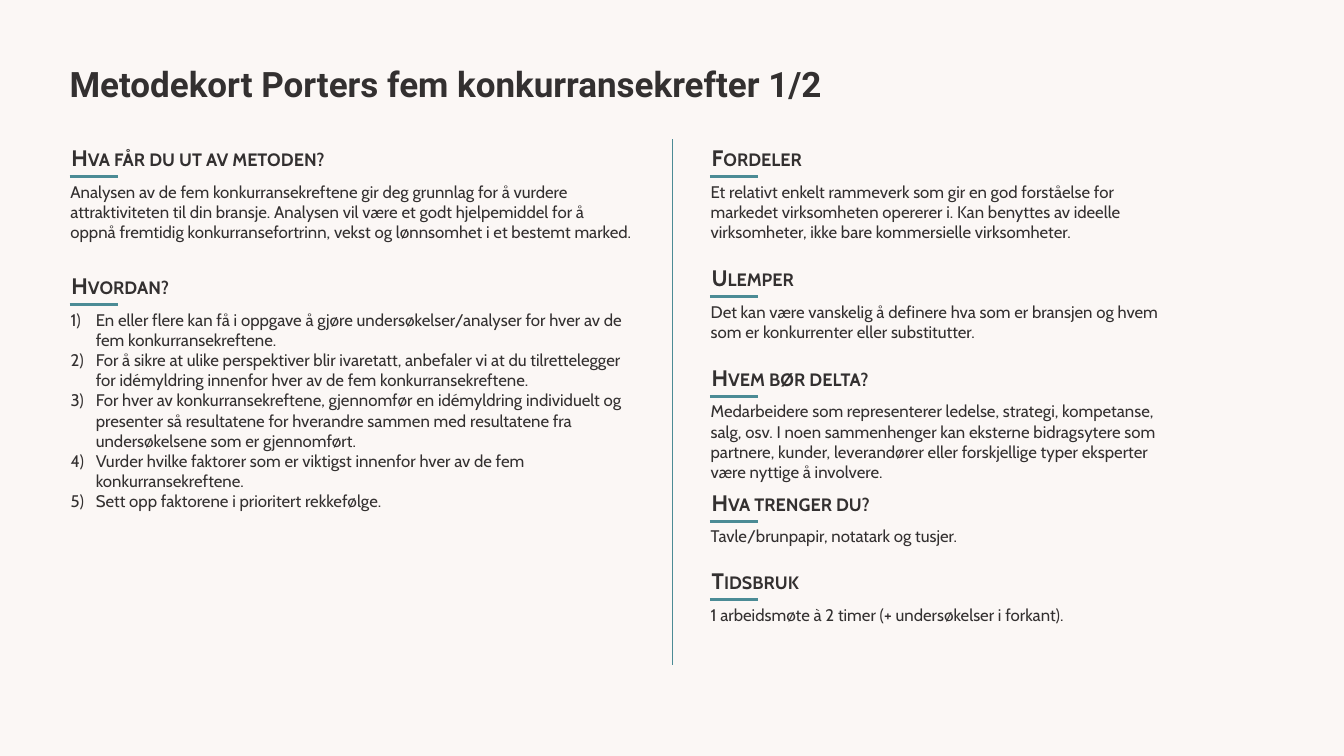
from lxml.etree import SubElement
from pptx import Presentation
from pptx.dml.color import RGBColor
from pptx.enum.shapes import MSO_CONNECTOR
from pptx.enum.text import MSO_ANCHOR, MSO_AUTO_SIZE, PP_ALIGN
from pptx.oxml.ns import qn
from pptx.util import Inches, Pt

INK, TEAL, PAPER = "333030", "4B8B95", "FBF7F5"
TITLE_FONT = {"name": "Roboto", "size": Pt(25), "bold": True}
HEADING_FONT = {"name": "Cabin", "size": Pt(16), "bold": True}
BODY_FONT = {"name": "Cabin", "size": Pt(12), "bold": False}
HEADING_HEIGHT = 0.37

STEPS = [
    "En eller flere kan få i oppgave å gjøre undersøkelser/analyser for hver av de fem konkurransekreftene.",
    "For å sikre at ulike perspektiver blir ivaretatt, anbefaler vi at du tilrettelegger for idémyldring "
    "innenfor hver av de fem konkurransekreftene.",
    "For hver av konkurransekreftene, gjennomfør en idémyldring individuelt og presenter så resultatene for "
    "hverandre sammen med resultatene fra undersøkelsene som er gjennomført.",
    "Vurder hvilke faktorer som er viktigst innenfor hver av de fem konkurransekreftene.",
    "Sett opp faktorene i prioritert rekkefølge.",
]

LEFT_SECTIONS = [
    (1.38, "Hva får du ut av metoden?", 3,
     ["Analysen av de fem konkurransekreftene gir deg grunnlag for å vurdere attraktiviteten til din bransje. "
      "Analysen vil være et godt hjelpemiddel for å oppnå fremtidig konkurransefortrinn, vekst og lønnsomhet "
      "i et bestemt marked."]),
    (2.65, "Hvordan?", 10, STEPS),
]

RIGHT_SECTIONS = [
    (1.38, "Fordeler", 3,
     ["Et relativt enkelt rammeverk som gir en god forståelse for markedet virksomheten opererer i. "
      "Kan benyttes av ideelle virksomheter, ikke bare kommersielle virksomheter."]),
    (2.57, "Ulemper", 2,
     ["Det kan være vanskelig å definere hva som er bransjen og hvem som er konkurrenter eller substitutter."]),
    (3.56, "Hvem bør delta?", 4,
     ["Medarbeidere som representerer ledelse, strategi, kompetanse, salg, osv. I noen sammenhenger kan "
      "eksterne bidragsytere som partnere, kunder, leverandører eller forskjellige typer eksperter være "
      "nyttige å involvere."]),
    (4.8, "Hva trenger du?", 1, ["Tavle/brunpapir, notatark og tusjer."]),
    (5.58, "Tidsbruk", 1, ["1 arbeidsmøte à 2 timer (+ undersøkelser i forkant)."]),
]


def color(hex_value):
    """Turn a hex string into a colour."""
    return RGBColor.from_string(hex_value)


def set_attributes(target, values):
    """Set every attribute in a dict of format values."""
    for name, value in values.items():
        setattr(target, name, value)


def place(shape, box):
    """Move a shape to a box of left, top, width and height in inches."""
    set_attributes(shape, dict(zip(("left", "top", "width", "height"), map(Inches, box))))


def write(shape, texts, font, numbered=False):
    """Fill a shape with one formatted paragraph for each text."""
    frame = shape.text_frame
    for index, text in enumerate(texts):
        paragraph = frame.paragraphs[0] if index == 0 else frame.add_paragraph()
        if numbered:
            properties = paragraph._p.get_or_add_pPr()
            properties.set("marL", str(Inches(0.25)))
            properties.set("indent", str(Inches(-0.25)))
            SubElement(properties, qn("a:buFont")).set("typeface", "+mj-lt")
            SubElement(properties, qn("a:buAutoNum")).set("type", "arabicParenR")
        set_attributes(paragraph, {"alignment": PP_ALIGN.LEFT, "space_before": Pt(0)})
        run = paragraph.add_run()
        run.text = text
        set_attributes(run.font, font)
        run.font.color.rgb = color(INK)


def add_text(slide, box, texts, font):
    """Add a wrapping text box that fits its text."""
    shape = slide.shapes.add_textbox(*map(Inches, box))
    set_attributes(shape.text_frame, {"word_wrap": True, "auto_size": MSO_AUTO_SIZE.SHAPE_TO_FIT_TEXT})
    write(shape, texts, font)
    return shape


def add_line(slide, start, end, width):
    """Draw a straight teal line without shadow."""
    line = slide.shapes.add_connector(MSO_CONNECTOR.STRAIGHT, *map(Inches, start + end))
    line.line.color.rgb = color(TEAL)
    line.line.width = Pt(width)
    SubElement(line._element.spPr, qn("a:effectLst"))


def add_title(slide, box, text):
    """Write the title in its placeholder."""
    title = slide.shapes.title
    place(title, box)
    margins = dict.fromkeys(("margin_left", "margin_top", "margin_right", "margin_bottom"), 0)
    set_attributes(title.text_frame, {**margins, "vertical_anchor": MSO_ANCHOR.MIDDLE,
                                      "auto_size": MSO_AUTO_SIZE.NONE})
    write(title, [text], TITLE_FONT)
    title.text_frame.paragraphs[0].line_spacing = Pt(30)


def add_section(slide, left, top, width, heading, line_count, texts):
    """Add a small-caps heading, its underline and the text below."""
    heading_box = (left + 0.01, top, 4.91, HEADING_HEIGHT)
    heading_shape = add_text(slide, heading_box, [heading], HEADING_FONT)
    heading_run = heading_shape.text_frame.paragraphs[0].runs[0]
    heading_run.font._element.set("cap", "small")
    body_top = top + HEADING_HEIGHT
    body_box = (left, body_top, width, 0.1 + 0.2 * line_count)
    if len(texts) > 1:
        body = slide.placeholders[1]
        place(body, body_box)
        body.text_frame.auto_size = MSO_AUTO_SIZE.SHAPE_TO_FIT_TEXT
        write(body, texts, BODY_FONT, numbered=True)
    else:
        add_text(slide, body_box, texts, BODY_FONT)
    add_line(slide, (left + 0.09, body_top), (left + 0.57, body_top), 2.25)


def add_column(slide, left, width, sections):
    """Stack the sections of one column."""
    for top, heading, line_count, texts in sections:
        add_section(slide, left, top, width, heading, line_count, texts)


def main():
    """Build the method card and save it."""
    presentation = Presentation()
    set_attributes(presentation, {"slide_width": Inches(13.33), "slide_height": Inches(7.5)})
    slide = presentation.slides.add_slide(presentation.slide_layouts[1])
    slide.background.fill.solid()
    slide.background.fill.fore_color.rgb = color(PAPER)
    add_title(slide, (0.69, 0.62, 11.95, 0.42), "Metodekort Porters fem konkurransekrefter 1/2")
    add_column(slide, 0.6, 5.78, LEFT_SECTIONS)
    add_line(slide, (6.67, 1.38), (6.67, 6.6), 0.5)
    add_column(slide, 6.95, 4.91, RIGHT_SECTIONS)
    presentation.save("out.pptx")


if __name__ == "__main__":
    main()
